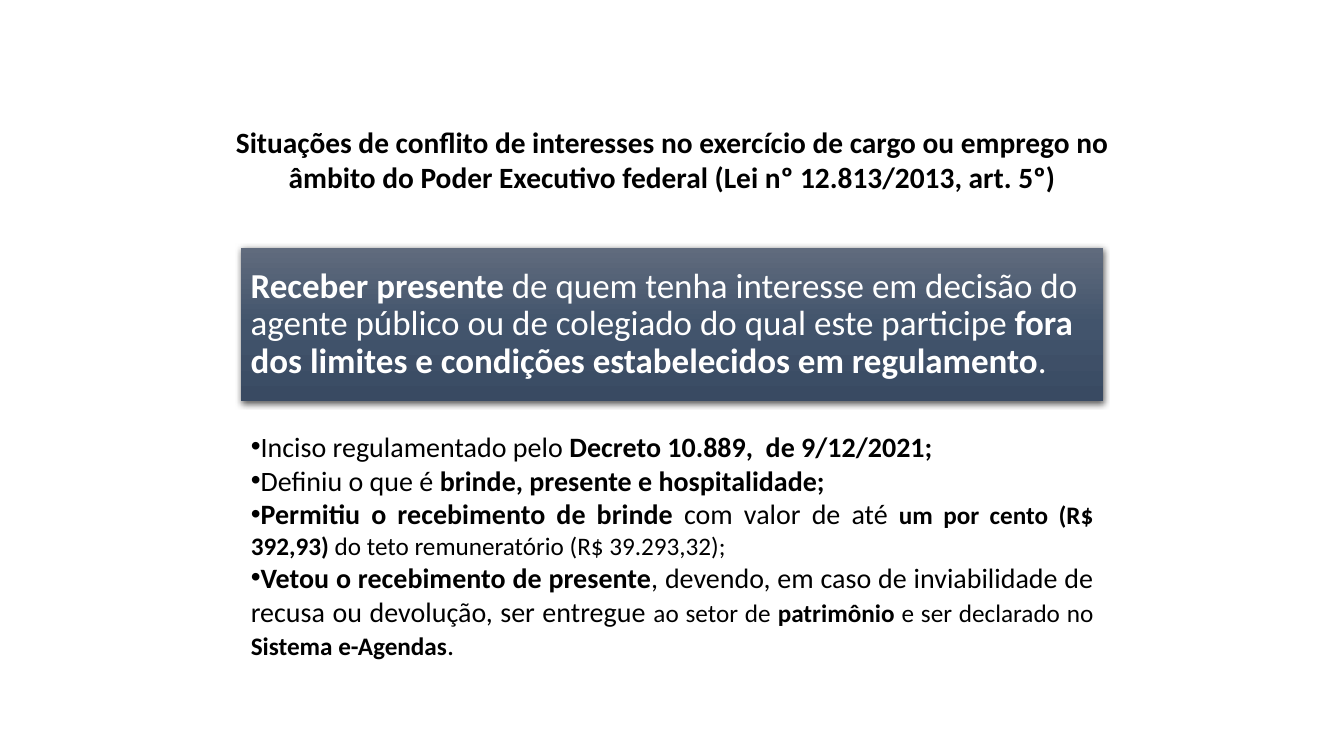
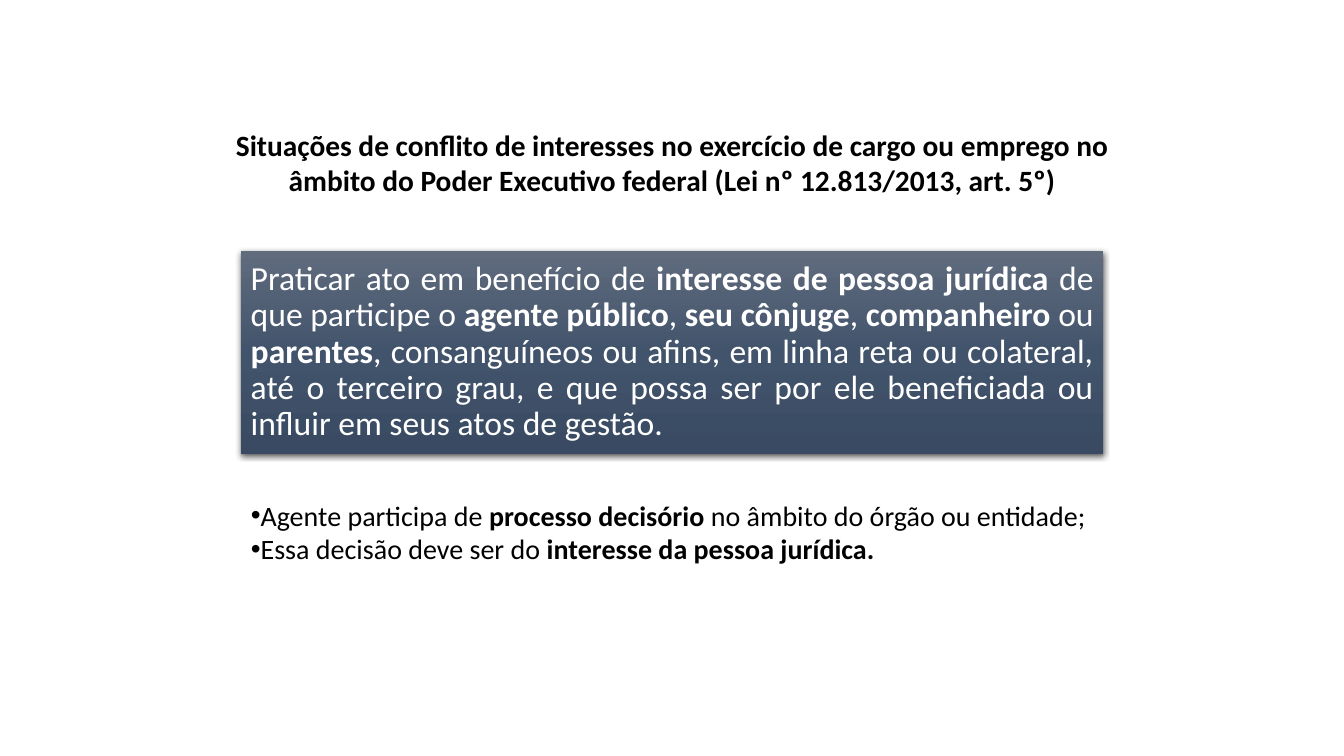
from copy import deepcopy
from dataclasses import dataclass

from pptx import Presentation
from pptx import util as u
from pptx.dml.color import RGBColor
from pptx.enum import shapes, text
from pptx.oxml.ns import qn
from pptx.oxml.xmlchemy import OxmlElement


@dataclass(frozen=True)
class Theme:
    font: str = "Calibri"
    paper: str = "FFFFFF"
    ink: str = "000000"
    panel_ink: str = "FFFFFF"
    panel_stops: tuple = ((0, "606B7D"), (0.5, "42546C"), (1, "394A62"))
    title_size: int = 21
    body_size: int = 20
    small_size: int = 18


@dataclass(frozen=True)
class Box:
    left: float
    top: float
    width: float
    height: float

    def place(self, shape):
        for side in ("left", "top", "width", "height"):
            setattr(shape, side, u.Cm(getattr(self, side)))


THEME = Theme()
LEFT, WIDTH = 6.07, 21.74
TITLE_OVERHANG, TITLE_HEIGHT, TITLE_GAP = 0.38, 1.73, 1.37
ALIGN = text.PP_ALIGN
TITLE = ("Situações de conflito de interesses no exercício de cargo ou emprego no "
         "âmbito do Poder Executivo federal (Lei nº 12.813/2013, art. 5º)")

# In the texts, *...* is bold and ~...~ is small
SLIDES = (
    dict(
        top=3.15, panel_height=3.86, panel_size=25, panel_align=ALIGN.LEFT,
        panel="*Receber presente* de quem tenha interesse em decisão do agente público "
              "ou de colegiado do qual este participe *fora dos limites e condições "
              "estabelecidos em regulamento*.",
        gap=0.58, list_height=6.15,
        points=(
            ("Inciso regulamentado pelo *Decreto 10.889,  de 9/12/2021;*", ALIGN.LEFT),
            ("Definiu o que é *brinde, presente e hospitalidade;*", ALIGN.LEFT),
            ("*Permitiu o recebimento de brinde* com valor de até ~*um por cento "
             "(R$ 392,93)* do teto remuneratório (R$ 39.293,32);~", ALIGN.JUSTIFY),
            ("*Vetou o recebimento de presente*, devendo, em caso de inviabilidade de "
             "recusa ou devolução, ser entregue ~ao setor de *patrimônio* e ser "
             "declarado no *Sistema e-Agendas*~.", ALIGN.JUSTIFY),
        ),
    ),
    dict(
        top=3.22, panel_height=5.11, panel_size=24, panel_align=ALIGN.JUSTIFY,
        panel="Praticar ato em benefício de *interesse de pessoa jurídica* de que "
              "participe o *agente público*, *seu cônjuge*, *companheiro* ou "
              "*parentes*, consanguíneos ou afins, em linha reta ou colateral, até o "
              "terceiro grau, e que possa ser por ele beneficiada ou influir em seus "
              "atos de gestão.",
        gap=0.99, list_height=2.82,
        points=(
            ("Agente participa de *processo decisório* no âmbito do órgão ou entidade;",
             ALIGN.JUSTIFY),
            ("Essa decisão deve ser do *interesse da pessoa jurídica.*", ALIGN.JUSTIFY),
        ),
    ),
)


def set_all(target, **values):
    for name, value in values.items():
        setattr(target, name, value)


def set_frame(frame, anchor, side, edge):
    set_all(frame, word_wrap=True, auto_size=text.MSO_AUTO_SIZE.NONE,
            vertical_anchor=anchor,
            margin_left=u.Cm(side), margin_right=u.Cm(side),
            margin_top=u.Cm(edge), margin_bottom=u.Cm(edge))


def write(para, marked, size, colour, **layout):
    set_all(para, space_before=u.Pt(0), **layout)
    for small, section in enumerate(marked.split("~")):
        for bold, words in enumerate(section.split("*")):
            if words:
                span = para.add_run()
                span.text = words
                set_all(span.font, name=THEME.font, bold=bold % 2 == 1,
                        size=u.Pt(THEME.small_size if small % 2 else size))
                span.font.color.rgb = RGBColor.from_string(colour)


def add_shadow(shape):
    shape.shadow.inherit = False
    shadow = OxmlElement("a:outerShdw")
    for name, value in dict(blurRad=u.Pt(4.5), dist=u.Pt(1.5), dir=90 * 60000,
                            rotWithShape=0).items():
        shadow.set(name, str(value))
    colour = OxmlElement("a:srgbClr")
    colour.set("val", THEME.ink)
    alpha = OxmlElement("a:alpha")
    alpha.set("val", "63000")
    colour.append(alpha)
    shadow.append(colour)
    shape.element.spPr.find(qn("a:effectLst")).append(shadow)


def fill_gradient(shape):
    shape.fill.gradient()
    shape.fill.gradient_angle = 270
    stop_list = shape.element.spPr.find(".//" + qn("a:gsLst"))
    stop_list.append(deepcopy(stop_list[0]))
    for stop, (position, colour) in zip(shape.fill.gradient_stops, THEME.panel_stops):
        stop.position = position
        stop.color.rgb = RGBColor.from_string(colour)


def fill_title(page, box):
    title = page.shapes.title
    box.place(title)
    set_frame(title.text_frame, text.MSO_ANCHOR.MIDDLE, 0.18, 0.1)
    write(title.text_frame.paragraphs[0], f"*{TITLE}*", THEME.title_size, THEME.ink,
          alignment=ALIGN.CENTER)


def add_panel(page, box, words, size, align):
    panel = page.shapes.add_shape(shapes.MSO_SHAPE.RECTANGLE, 0, 0, 0, 0)
    box.place(panel)
    fill_gradient(panel)
    panel.line.fill.background()
    add_shadow(panel)
    set_frame(panel.text_frame, text.MSO_ANCHOR.MIDDLE, 0.25, 0.25)
    write(panel.text_frame.paragraphs[0], words, size, THEME.panel_ink,
          alignment=align, line_spacing=0.9)


def fill_list(page, box, points):
    body = page.placeholders[1]
    box.place(body)
    frame = body.text_frame
    set_frame(frame, text.MSO_ANCHOR.TOP, 0.25, 0.13)
    for index, (words, align) in enumerate(points):
        para = frame.add_paragraph() if index else frame.paragraphs[0]
        write(para, words, THEME.body_size, THEME.ink, alignment=align)
        # The bullet sits tight against the text
        layout = para._p.get_or_add_pPr()
        layout.set("marL", "0")
        layout.set("indent", str(-u.Cm(0.79)))


def add_article_slide(deck, content):
    page = deck.slides.add_slide(deck.slide_layouts[1])

    # Title, slightly wider than the column
    fill_title(page, Box(LEFT - TITLE_OVERHANG, content["top"],
                         WIDTH + 2 * TITLE_OVERHANG, TITLE_HEIGHT))

    # Quoted clause
    panel_top = content["top"] + TITLE_HEIGHT + TITLE_GAP
    add_panel(page, Box(LEFT, panel_top, WIDTH, content["panel_height"]),
              content["panel"], content["panel_size"], content["panel_align"])

    # Explanatory points
    list_top = panel_top + content["panel_height"] + content["gap"]
    fill_list(page, Box(LEFT, list_top, WIDTH, content["list_height"]),
              content["points"])


def main():
    deck = Presentation()
    set_all(deck, slide_width=u.Cm(33.87), slide_height=u.Cm(19.05))
    paper = deck.slide_master.background.fill
    paper.solid()
    paper.fore_color.rgb = RGBColor.from_string(THEME.paper)
    for content in SLIDES:
        add_article_slide(deck, content)
    deck.save("out.pptx")


if __name__ == "__main__":
    main()
